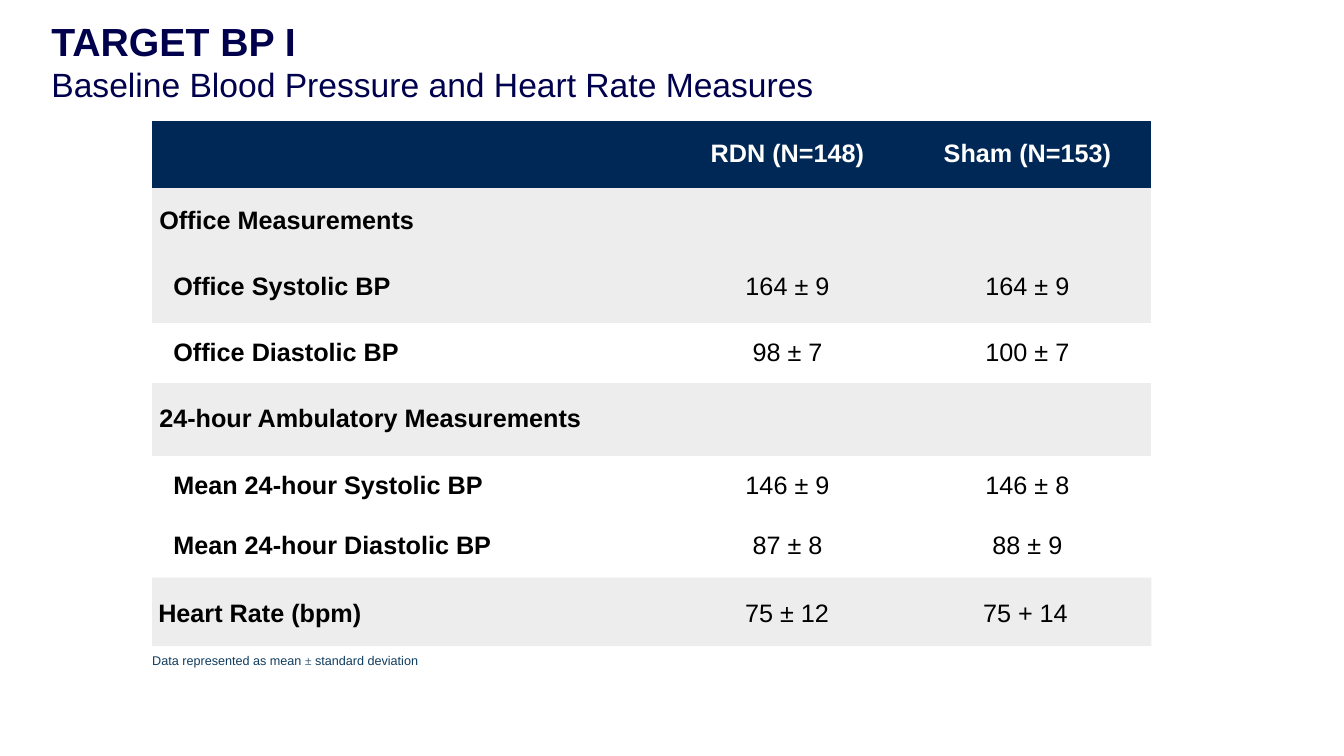
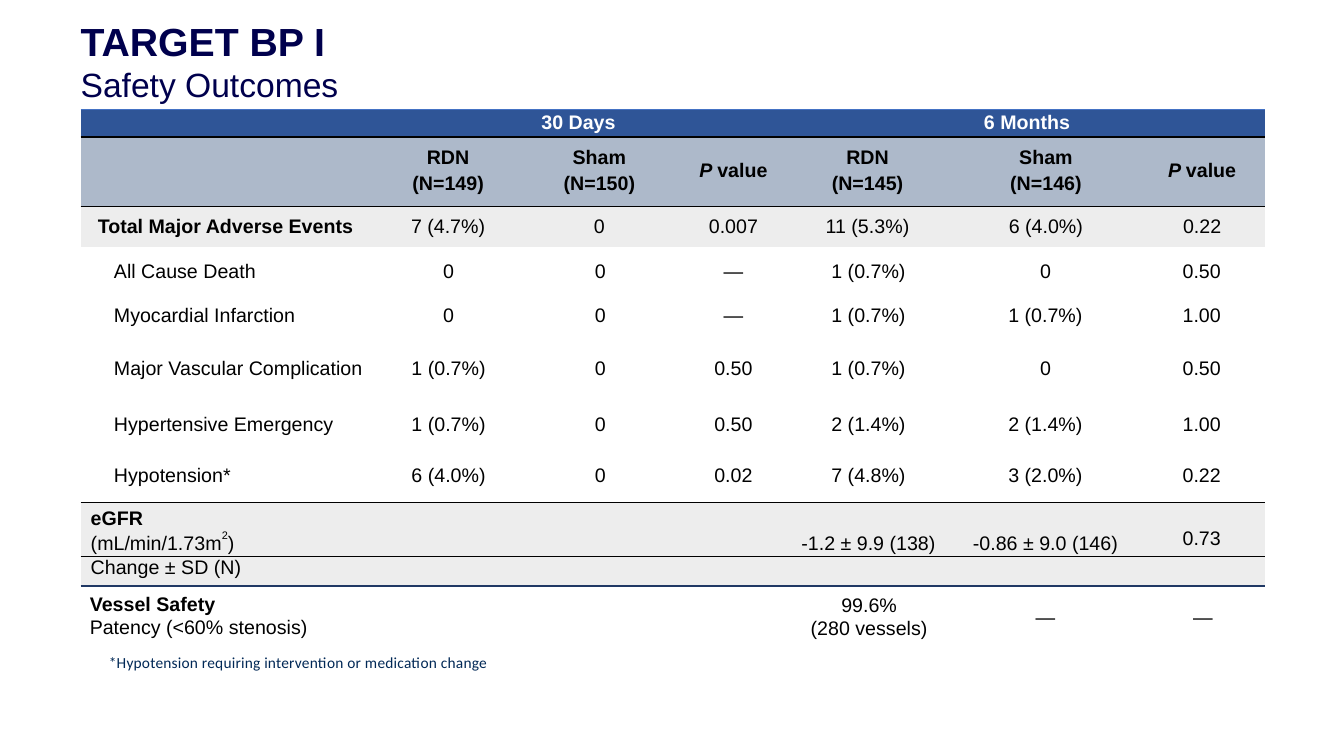
from dataclasses import dataclass

from lxml.etree import SubElement
from pptx import Presentation
from pptx.dml.color import RGBColor
from pptx.enum.shapes import MSO_SHAPE
from pptx.enum.text import MSO_ANCHOR, PP_ALIGN
from pptx.oxml import parse_xml
from pptx.oxml.ns import nsdecls, qn
from pptx.util import Inches, Pt


@dataclass(frozen=True)
class Theme:
    font: str = "Arial"
    title: str = "00004D"
    black: str = "000000"
    white: str = "FFFFFF"
    navy: str = "002856"
    blue: str = "2F5597"
    steel: str = "ADB9CA"
    grey: str = "EDEDED"
    top_rule: str = "4472C4"
    end_rule: str = "203864"
    note: str = "103D5F"
    title_size: float = 28
    subtitle_size: float = 24
    baseline_size: float = 18
    safety_size: float = 14


T = Theme()
NO_STYLE = "{2D5ABB26-0587-4C30-8999-92F81FD0307C}"


def write(tf, text, size, color=T.black, bold=False, font=T.font,
          align=PP_ALIGN.LEFT, spacing=None, gap=0, tracking=0):
    for i, line in enumerate([text] if isinstance(text, str) else text):
        p = tf.paragraphs[0] if i == 0 else tf.add_paragraph()
        p.alignment = align
        if spacing:
            p.line_spacing = spacing
        if i and gap:
            p.space_before = Pt(gap)
        if not line:
            SubElement(p._p, qn("a:endParaRPr"), sz=str(size * 100))
            continue
        for words, own in [(line, {})] if isinstance(line, str) else line:
            r = p.add_run()
            r.text = words
            r.font.size = Pt(own.get("size", size))
            r.font.bold = own.get("bold", bold)
            r.font.italic = own.get("italic", False)
            r.font.name = own.get("font", font)
            r.font.color.rgb = RGBColor.from_string(color)
            if "raised" in own:
                r._r.get_or_add_rPr().set("baseline", str(own["raised"] * 1000))
            if tracking:
                r._r.get_or_add_rPr().set("spc", str(tracking))


def add_rule(row, side, color):
    paint = f'<a:solidFill><a:srgbClr val="{color}"/></a:solidFill>' if color else "<a:noFill/>"
    for cell in row.cells:
        cell._tc.get_or_add_tcPr().insert(0, parse_xml(
            f'<a:{side} {nsdecls("a")} w="12700">{paint}</a:{side}>'))


BOLD = {"bold": True}
HEAD = {"bold": True, "color": T.white}
COLUMN_HEAD = {"bold": True, "spacing": 1.19}
OFFICE = {"bold": True, "gap": 26.5}
BODY = {"size": T.baseline_size}
SMALL = {"size": T.safety_size}
CENTERED = {"size": T.safety_size, "align": PP_ALIGN.CENTER}
P_VALUE = [[("P ", {"italic": True}), ("value", {})]]
EGFR = [[("eGFR", BOLD)],
        [("(mL/min/1.73m", {}), ("2", {"size": 13.5, "raised": 56}), (")", {})]]

baseline_rows = [
    (0.67, T.navy, 0, 0.02, HEAD, HEAD, ["", "RDN (N=148)", "Sham (N=153)"]),
    (1.33, T.grey, 0.21, 0.22, OFFICE, {},
     [["Office Measurements", "Office Systolic BP"], "164 ± 9", "164 ± 9"]),
    (0.6, None, 0.21, 0, BOLD, {}, ["Office Diastolic BP", "98 ± 7", "100 ± 7"]),
    (0.72, T.grey, 0.07, 0.02, BOLD, {}, ["24-hour Ambulatory Measurements", "", ""]),
    (0.62, None, 0.21, 0.02, BOLD, {}, ["Mean 24-hour Systolic BP", "146 ± 9", "146 ± 8"]),
    (0.59, None, 0.21, 0.04, BOLD, {}, ["Mean 24-hour Diastolic BP", "87 ± 8", "88 ± 9"]),
]

header_rows = [
    (0.27, T.blue, 0, 0.01, HEAD, HEAD, ["", "", "30 Days", "", "", "6 Months", ""]),
    (0.69, T.steel, 0, 0.06, {}, COLUMN_HEAD,
     ["", "RDN (N=149)", "Sham (N=150)", P_VALUE, "RDN (N=145)", "Sham (N=146)", P_VALUE]),
    (0.4, T.grey, 0.17, 0, BOLD, {},
     ["Total Major Adverse Events", "7 (4.7%)", "0", "0.007", "11 (5.3%)", "6 (4.0%)", "0.22"]),
]

event_rows = [
    (0.33, None, 0.33, 0.11, {}, {},
     ["All Cause Death", "0", "0", "—", "1 (0.7%)", "0", "0.50"]),
    (0.48, None, 0.33, 0.07, {}, {},
     ["Myocardial Infarction", "0", "0", "—", "1 (0.7%)", "1 (0.7%)", "1.00"]),
    (0.54, None, 0.33, 0.04, {}, {},
     ["Major Vascular Complication", "1 (0.7%)", "0", "0.50", "1 (0.7%)", "0", "0.50"]),
    (0.53, None, 0.33, 0, {}, {},
     ["Hypertensive Emergency", "1 (0.7%)", "0", "0.50", "2 (1.4%)", "2 (1.4%)", "1.00"]),
    (0.51, None, 0.33, 0.02, {}, {},
     ["Hypotension*", "6 (4.0%)", "0", "0.02", "7 (4.8%)", "3 (2.0%)", "0.22"]),
    (0.54, T.grey, 0.1, 0.02, {}, {},
     [EGFR, "", "", "", "-1.2 ± 9.9 (138)", "-0.86 ± 9.0 (146)", "0.73"]),
    (0.29, T.grey, 0.1, 0, {}, {}, ["Change ± SD (N)", "", "", "", "", "", ""]),
]

slides = [
    {"subtitle": "Baseline Blood Pressure and Heart Rate Measures", "indent": 0.21,
     "size": T.baseline_size, "band": (1.51, 5.73, 9.91, 0.68),
     "tables": [(1.51, 1.2, [4.45, 3, 2.46], [0, 0.35, 0], baseline_rows)],
     "texts": [
         (1.57, 5.91, 2.04, 0.33, "Heart Rate (bpm)", {**BODY, **BOLD}),
         (7.39, 5.91, 0.86, 0.33, "75 ± 12", BODY),
         (9.75, 5.91, 0.87, 0.33, "75 + 14", BODY),
         (1.51, 6.46, 2.68, 0.18,
          [[("Data represented as mean ", {}), ("± ", {"font": "Times New Roman"}),
            ("standard deviation", {})]], {"size": 9, "color": T.note})]},
    {"subtitle": "Safety Outcomes", "indent": 0.5,
     "size": T.safety_size, "band": None,
     "tables": [
         (0.8, 1.09, [2.99, 1.31, 1.53, 1.29, 1.49, 1.77, 1.37],
          [0, 0, 0.08, 0, -0.06, 0.08, 0.06], header_rows),
         (0.8, 2.58, [3.04, 1.52, 1.19, 1.15, 1.75, 1.96, 1.14],
          [0, -0.15, 0, 0.15, 0.04, -0.06, -0.06], event_rows)],
     "texts": [
         (0.89, 5.85, 2.18, 0.5,
          [[("Vessel Safety", BOLD)], "Patency (<60% stenosis)"], SMALL),
         (8.03, 5.86, 1.18, 0.48, ["99.6%", "(280 vessels)"], CENTERED),
         (10.26, 5.98, 0.22, 0.26, "—", CENTERED),
         (11.82, 5.98, 0.22, 0.26, "—", CENTERED),
         (1.08, 6.46, 3.84, 0.21, "*Hypotension requiring intervention or medication change",
          {"size": 11, "color": T.navy, "font": "Calibri", "tracking": 14})]},
]

prs = Presentation()
prs.slide_width, prs.slide_height = Inches(13.33), Inches(7.5)
tables = []

for page in slides:
    s = prs.slides.add_slide(prs.slide_layouts[6])
    if page["band"]:
        sp = s.shapes.add_shape(MSO_SHAPE.RECTANGLE, *(Inches(v) for v in page["band"]))
        sp.shadow.inherit = False
        sp.fill.solid()
        sp.fill.fore_color.rgb = RGBColor.from_string(T.grey)
        sp.line.fill.background()

    for left, top, cols, shifts, rows in page["tables"]:
        table = s.shapes.add_table(
            len(rows), len(cols), Inches(left), Inches(top),
            Inches(sum(cols)), Inches(sum(row[0] for row in rows))).table
        table.first_row = table.horz_banding = False
        table._tbl.tblPr.find(qn("a:tableStyleId")).text = NO_STYLE
        tables.append(table)
        for column, width in zip(table.columns, cols):
            column.width = Inches(width)
        for row, (height, fill, indent, lift, label, value, texts) in zip(table.rows, rows):
            row.height = Inches(height)
            pad = 0.25 if value is COLUMN_HEAD else 0
            for c, (cell, text, shift) in enumerate(zip(row.cells, texts, shifts)):
                cell.margin_left = Inches(pad + max(0, 2 * shift) if c else indent)
                cell.margin_right = Inches(pad + max(0, -2 * shift) if c else 0)
                cell.margin_top = 0
                cell.margin_bottom = Inches(lift)
                cell.vertical_anchor = MSO_ANCHOR.MIDDLE
                if fill:
                    cell.fill.solid()
                    cell.fill.fore_color.rgb = RGBColor.from_string(fill)
                else:
                    cell.fill.background()
                write(cell.text_frame, text, page["size"],
                      align=PP_ALIGN.CENTER if c else PP_ALIGN.LEFT,
                      **(value if c else label))

    title = [[("TARGET BP I", {"bold": True, "size": T.title_size})], page["subtitle"]]
    title_box = (0.3, 0.15, 12.74, 0.9, title, {"size": T.subtitle_size, "color": T.title})
    for left, top, width, height, text, style in [*page["texts"], title_box]:
        tf = s.shapes.add_textbox(Inches(left), Inches(top), Inches(width), Inches(height)).text_frame
        tf.word_wrap = True
        tf.margin_left = Inches(page["indent"] if text is title else 0)
        tf.margin_right = tf.margin_bottom = 0
        tf.margin_top = Inches(0.02)
        write(tf, text, **style)

baseline, header, events = tables
for cell in baseline.rows[1].cells:
    cell.vertical_anchor = MSO_ANCHOR.BOTTOM
office = baseline.cell(1, 0)
office.margin_left = Inches(0.07)
office_systolic = office.text_frame.paragraphs[1]
office_systolic._p.get_or_add_pPr().set("marL", str(Inches(0.14)))
baseline.cell(3, 0).merge(baseline.cell(3, 2))

for c, indent in ((2, 0.27), (5, 0.35)):
    period = header.cell(0, c)
    period.margin_left = Inches(indent)
    period.text_frame.paragraphs[0].alignment = PP_ALIGN.LEFT

for cell in events.rows[5].cells:
    cell.vertical_anchor = MSO_ANCHOR.BOTTOM
events.cell(5, 6).margin_bottom = Inches(0.07)
for cell in events.rows[6].cells:
    cell.vertical_anchor = MSO_ANCHOR.TOP

for table, r, below, above in [
        (header, 0, T.black, T.top_rule), (header, 1, T.black, T.black),
        (header, 2, None, T.black), (events, 4, T.black, None),
        (events, 5, T.black, T.black), (events, 6, T.end_rule, T.black)]:
    add_rule(table.rows[r], "lnB", below)
    add_rule(table.rows[r], "lnT", above)

prs.save("out.pptx")
